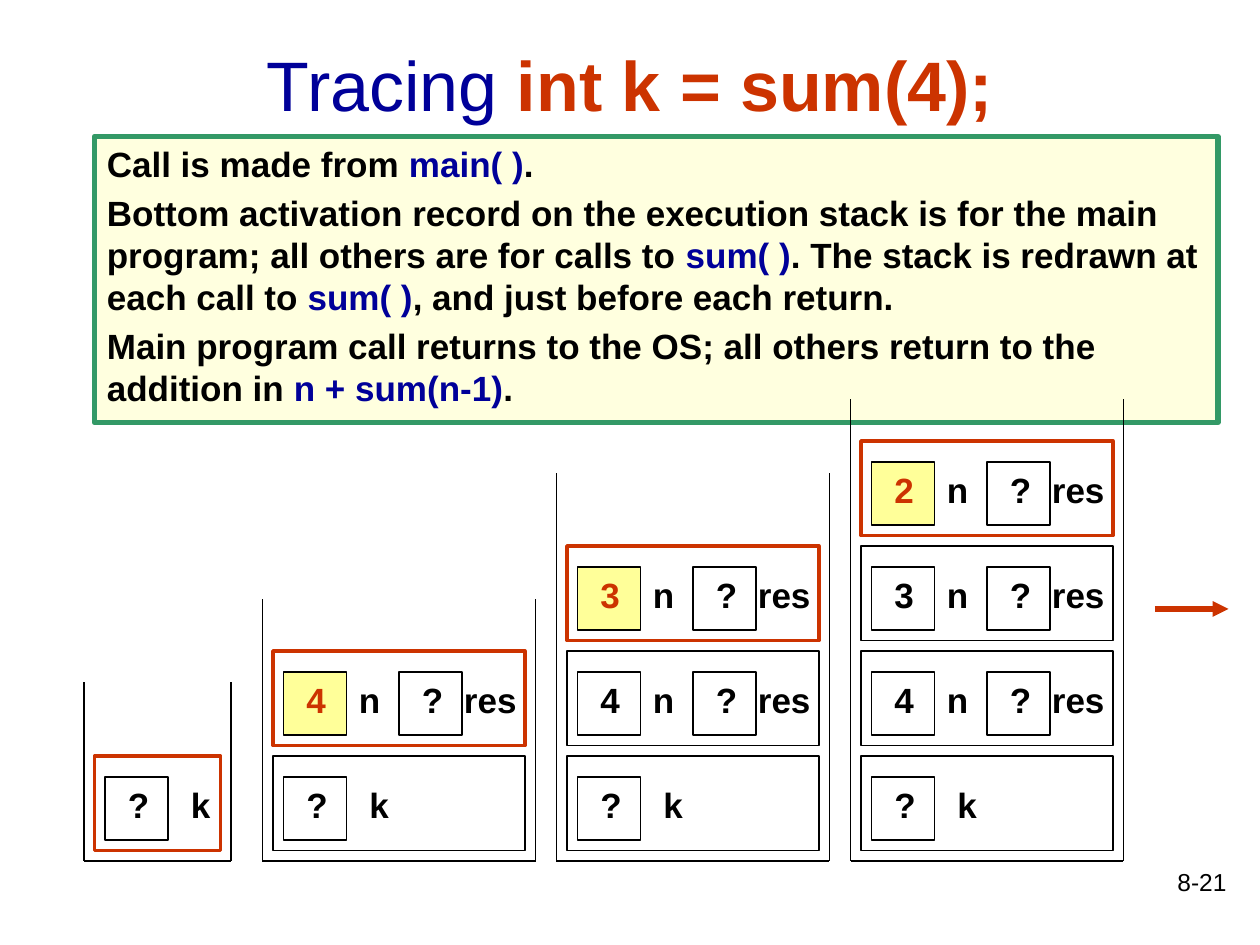
from dataclasses import dataclass

from lxml.etree import SubElement
from pptx import Presentation
from pptx.dml.color import RGBColor
from pptx.enum.shapes import MSO_CONNECTOR as Connector, MSO_SHAPE as Shape
from pptx.enum.text import MSO_ANCHOR as Anchor, PP_ALIGN as Align
from pptx.oxml.ns import qn
from pptx.util import Emu, Pt

EMU_PER_PX = 9525  # 96 px to the inch


@dataclass(frozen=True)
class Theme:
    font: str = "Arial"
    ink: str = "000000"
    code: str = "000099"
    accent: str = "CC3300"
    note_fill: str = "FFFFDF"
    note_line: str = "339966"
    argument_fill: str = "FFFF99"
    title_size: int = 40
    text_size: int = 20
    number_size: int = 14
    thin: float = 0.75
    medium: float = 2
    thick: float = 3


def px(*lengths):
    return [Emu(length * EMU_PER_PX) for length in lengths]


def add_text(paragraph, text, *, font, size, color, bold=False):
    run = paragraph.add_run()
    run.text = text
    run.font.name = font
    run.font.size = Pt(size)
    run.font.bold = bold
    run.font.color.rgb = RGBColor.from_string(color)


class SlideBuilder:
    def __init__(self, slide, theme):
        self.slide = slide
        self.theme = theme

    def styled_text(self, paragraph, text, color=None, size=None, bold=True):
        theme = self.theme
        add_text(paragraph, text, font=theme.font, size=size or theme.text_size,
                 color=color or theme.ink, bold=bold)

    def title(self, left, top, width, height, plain, code):
        title = self.slide.shapes.title
        title.left, title.top, title.width, title.height = px(left, top, width, height)
        title.text_frame.vertical_anchor = Anchor.MIDDLE
        paragraph = title.text_frame.paragraphs[0]
        paragraph.alignment = Align.CENTER
        size = self.theme.title_size
        self.styled_text(paragraph, plain, self.theme.code, size, bold=False)
        self.styled_text(paragraph, code, self.theme.accent, size)

    def rectangle(self, left, top, width, height, fill=None, line=None, weight=None):
        shape = self.slide.shapes.add_shape(Shape.RECTANGLE, *px(left, top, width, height))
        shape.shadow.inherit = False
        if fill:
            shape.fill.solid()
            shape.fill.fore_color.rgb = RGBColor.from_string(fill)
        else:
            shape.fill.background()
        shape.line.color.rgb = RGBColor.from_string(line or self.theme.ink)
        shape.line.width = Pt(weight or self.theme.thin)
        return shape

    def note(self, left, top, width, height, paragraphs):
        theme = self.theme
        shape = self.rectangle(left, top, width, height, theme.note_fill,
                               theme.note_line, theme.thick)
        frame = shape.text_frame
        frame.word_wrap = True
        frame.vertical_anchor = Anchor.TOP
        for index, pieces in enumerate(paragraphs):
            paragraph = frame.add_paragraph() if index else frame.paragraphs[0]
            paragraph.alignment = Align.LEFT
            paragraph.space_before = Pt(theme.text_size * 0.2)
            # Plain words and code alternate
            for position, piece in enumerate(pieces):
                self.styled_text(paragraph, piece, theme.code if position % 2 else theme.ink)

    def label(self, left, top, width, height, text, align=Align.LEFT, **style):
        box = self.slide.shapes.add_textbox(*px(left, top, width, height))
        box.text_frame.word_wrap = True
        paragraph = box.text_frame.paragraphs[0]
        paragraph.alignment = align
        self.styled_text(paragraph, text, **style)

    def line(self, x1, y1, x2, y2, color=None, weight=None, arrow=False):
        connector = self.slide.shapes.add_connector(Connector.STRAIGHT, *px(x1, y1, x2, y2))
        connector.line.color.rgb = RGBColor.from_string(color or self.theme.ink)
        connector.line.width = Pt(weight or self.theme.thin)
        properties = connector._element.spPr
        if arrow:
            SubElement(properties.find(qn("a:ln")), qn("a:tailEnd"), type="triangle")
        SubElement(properties, qn("a:effectLst"))

    def variable(self, left, top, value, name, name_offset, name_width=32,
                 fill=None, color=None):
        self.rectangle(left, top, 48, 48, fill)
        self.label(left + name_offset, top, name_width, 41, name)
        self.label(left + 8, top, 32, 41, value, color=color)

    def record(self, left, top, width, argument, active):
        theme = self.theme
        cell_left, cell_top = left + 8, top + 16
        if argument is None:
            self.variable(cell_left, cell_top, "?", "k", 56)
        else:
            self.variable(cell_left + 88, cell_top, "?", "res", 40, 64)
            self.variable(cell_left, cell_top, str(argument), "n", 48,
                          fill=theme.argument_fill if active else None,
                          color=theme.accent if active else None)
        self.rectangle(left, top, width, 72,
                       line=theme.accent if active else theme.ink,
                       weight=theme.medium if active else theme.thin)

    def stack(self, left, top, width, arguments):
        bottom, right = 656, left + width
        for level, argument in enumerate(arguments):
            self.record(left + 8, bottom - 80 * (level + 1), width - 16, argument,
                        active=level == len(arguments) - 1)
        self.line(left, bottom, right, bottom)
        for wall in (left, right):
            self.line(wall, bottom, wall, top)


NOTE = [
    ["Call is made from ", "main( )", "."],
    ["Bottom activation record on the execution stack is for the main program; "
     "all others are for calls to ", "sum( )", ". The stack is redrawn at each call to ",
     "sum( )", ", and just before each return."],
    ["Main program call returns to the OS; all others return to the addition in ",
     "n + sum(n-1)", "."],
]
# Left, top and width of each stack; each one holds one more record
STACKS = [(64, 520, 112), (200, 456, 208), (424, 360, 208), (648, 304, 208)]
CALLS = [None, 4, 3, 2]  # None is the main program


def main():
    theme = Theme()
    presentation = Presentation()
    presentation.slide_width, presentation.slide_height = px(960, 720)
    slide = presentation.slides.add_slide(presentation.slide_layouts[5])
    builder = SlideBuilder(slide, theme)

    # Slide number, title and explanation
    builder.label(744, 656, 200, 48, "8-21", Align.RIGHT,
                  size=theme.number_size, bold=False)
    builder.title(72, 16, 816, 96, "Tracing ", "int k = sum(4);")
    builder.note(72, 104, 856, 218, NOTE)

    # Execution stack after each call
    for depth, (left, top, width) in enumerate(STACKS, start=1):
        builder.stack(left, top, width, CALLS[:depth])

    # The trace goes on
    builder.line(880, 464, 936, 464, theme.accent, theme.thick, arrow=True)

    presentation.save("out.pptx")


if __name__ == "__main__":
    main()
